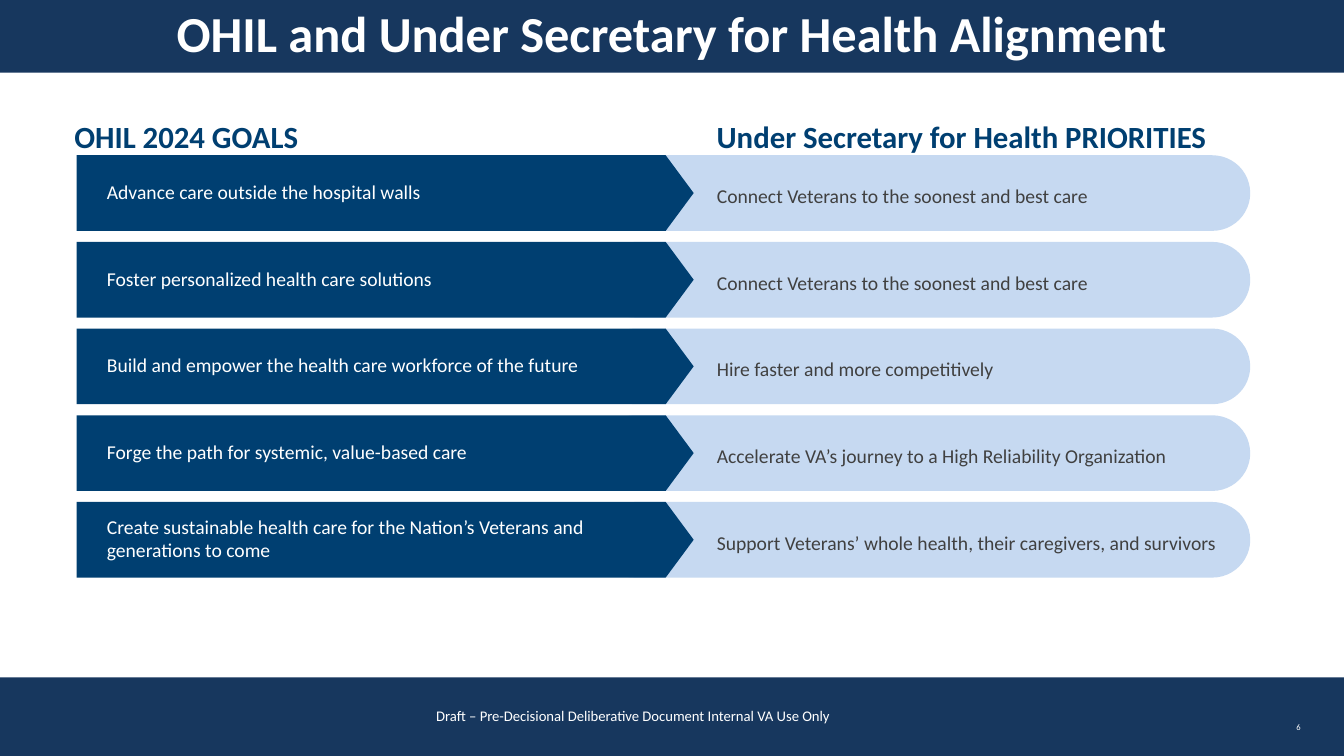
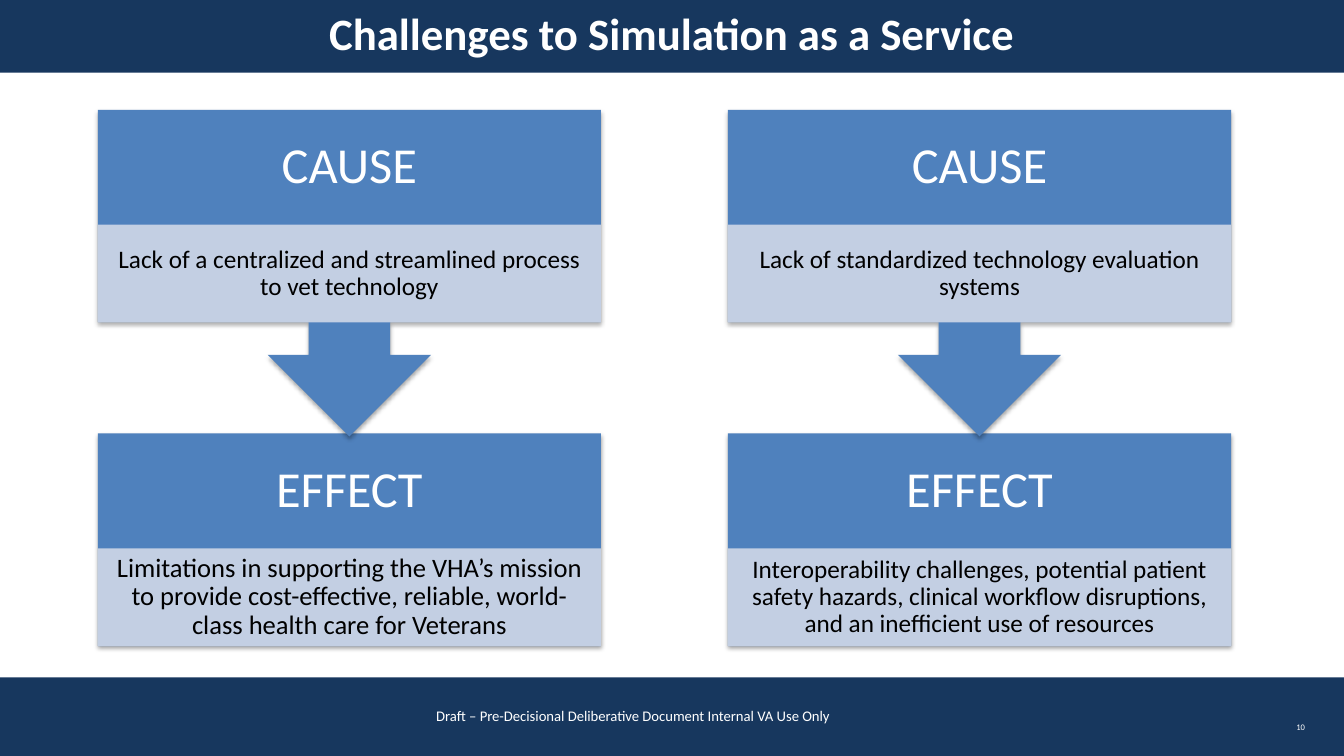
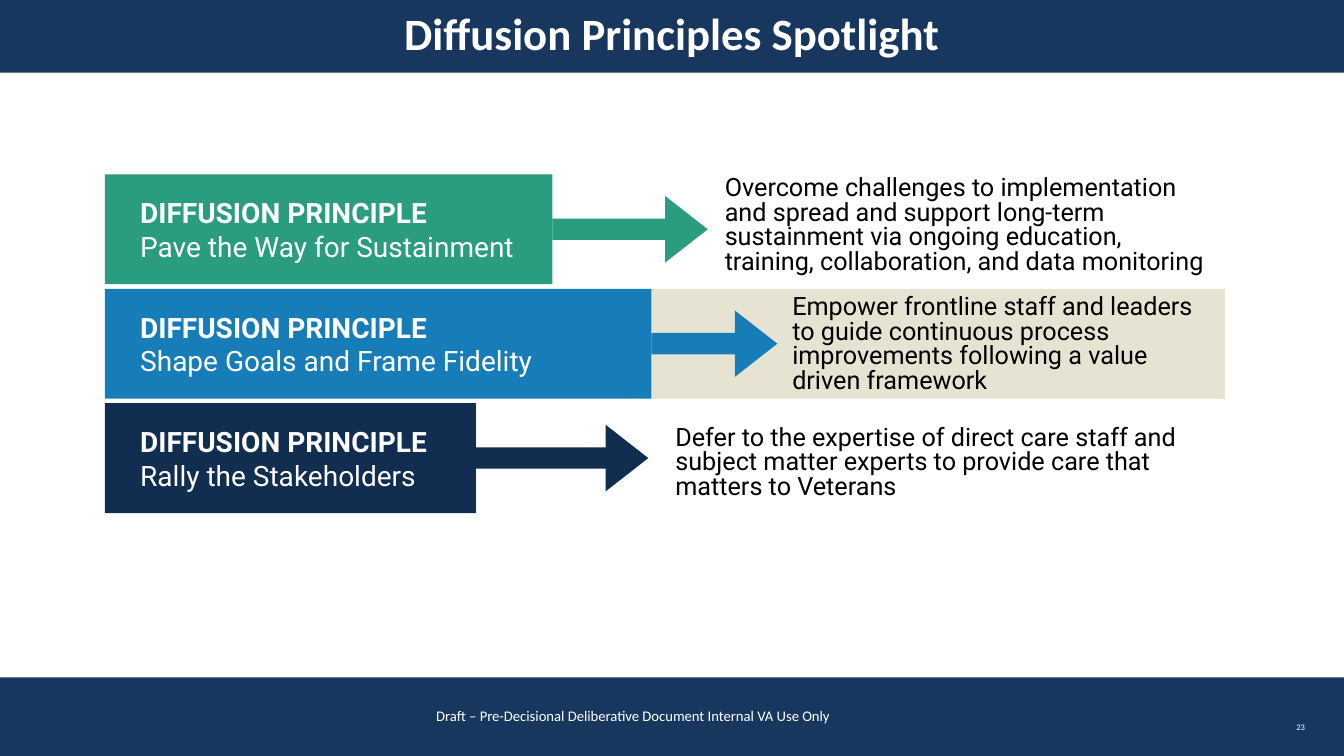
import pptx
import pptx.dml.color
import pptx.enum.shapes
import pptx.enum.text
import pptx.oxml
import pptx.oxml.ns
import pptx.util

Inches, Pt = pptx.util.Inches, pptx.util.Pt
SHAPE = pptx.enum.shapes.MSO_SHAPE
ALIGN = pptx.enum.text.PP_ALIGN
ANCHOR = pptx.enum.text.MSO_ANCHOR

WIDTH, HEIGHT = 13.33, 7.5
BAND, NAVY, PALE_BLUE = "17375E", "003F71", "C6D9F1"
BLUE, PALE_GREY_BLUE, BEIGE = "4F81BD", "D0D8E8", "E6E3D2"
WHITE, BLACK, DARK_GREY = "FFFFFF", "000000", "404040"
TITLE_BAND = (0, -0.08, WIDTH, 0.8)
FOOTER_BAND = (0, 6.72, WIDTH, 0.8)
FOOTER = "Draft – Pre-Decisional Deliberative Document Internal VA Use Only"

# Title, title size, slide number
ALIGNMENT = ("OHIL and Under Secretary for Health Alignment", 36, "6")
CHALLENGES = ("Challenges to Simulation as a Service", 32, "10")
PRINCIPLES = ("Diffusion Principles Spotlight", 32, "23")

COLUMN_HEADS = [
    ("OHIL 2024 GOALS", 0.64, 2.45),
    ("Under Secretary for Health PRIORITIES", 7.01, 5.12),
]
GOALS_AND_PRIORITIES = [
    ("Advance care outside the hospital walls",
     "Connect Veterans to the soonest and best care"),
    ("Foster personalized health care solutions",
     "Connect Veterans to the soonest and best care"),
    ("Build and empower the health care workforce of the future",
     "Hire faster and more competitively"),
    ("Forge the path for systemic, value-based care",
     "Accelerate VA’s journey to a High Reliability Organization"),
    ("Create sustainable health care for the Nation’s Veterans and\ngenerations to come",
     "Support Veterans’ whole health, their caregivers, and survivors"),
]

# Cause, effect, size of the effect text
CAUSES_AND_EFFECTS = [
    ("Lack of a centralized and streamlined process to vet technology",
     "Limitations in supporting the VHA’s mission to provide cost-effective, "
     "reliable, world-class health care for Veterans", 19),
    ("Lack of standardized technology evaluation systems",
     "Interoperability challenges, potential patient safety hazards, clinical "
     "workflow disruptions, and an inefficient use of resources", 18),
]

# Principle, colour, label width, arrow length, description, description place
DIFFUSION_PRINCIPLES = [
    ("Pave the Way for Sustainment", "2A9C80", 4.44, 1.54,
     "Overcome challenges to implementation and spread and support long-term "
     "sustainment via ongoing education, training, collaboration, and data monitoring",
     (7.09, 1.69, 5.06, 1.11)),
    ("Shape Goals and Frame Fidelity", "167DB9", 5.42, 1.25,
     "Empower frontline staff and leaders to guide continuous process "
     "improvements following a value driven framework",
     (7.76, 2.87, 4.4, 1.11)),
    ("Rally the Stakeholders", "112D50", 3.68, 1.71,
     "Defer to the expertise of direct care staff and subject matter experts "
     "to provide care that matters to Veterans",
     (6.6, 4.17, 5.69, 0.86)),
]
HIGHLIGHTED = 1


def rgb(value):
    return pptx.dml.color.RGBColor.from_string(value)


def write(shape, text, size, color, font="Calibri", bold=False, align=ALIGN.LEFT,
          anchor=ANCHOR.MIDDLE, margins=None, spacing=None, wrap=True):
    frame = shape.text_frame
    frame.text = text
    frame.word_wrap = wrap
    frame.vertical_anchor = anchor
    if margins:
        (frame.margin_left, frame.margin_top,
         frame.margin_right, frame.margin_bottom) = map(Inches, margins)
    for paragraph in frame.paragraphs:
        paragraph.alignment = align
        if spacing:
            paragraph.line_spacing = spacing
        for run in paragraph.runs:
            run.font.name, run.font.size, run.font.bold = font, Pt(size), bold
            run.font.color.rgb = rgb(color)


def add_text(slide, place, text, size, color, **style):
    box = slide.shapes.add_textbox(*map(Inches, place))
    write(box, text, size, color, **style)
    return box


def add_block(slide, kind, place, color, adjustments=()):
    block = slide.shapes.add_shape(kind, *map(Inches, place))
    block.shadow.inherit = False
    block.fill.solid()
    block.fill.fore_color.rgb = rgb(color)
    block.line.fill.background()
    for index, value in enumerate(adjustments):
        block.adjustments[index] = value
    return block


def drop_shadow(shape):
    effects = shape.element.spPr.find(pptx.oxml.ns.qn("a:effectLst"))
    effects.append(pptx.oxml.parse_xml(
        f'<a:outerShdw {pptx.oxml.ns.nsdecls("a")} blurRad="{Pt(3.1)}" dist="{Pt(1.8)}" '
        'dir="5400000" rotWithShape="0"><a:srgbClr val="000000">'
        '<a:alpha val="35000"/></a:srgbClr></a:outerShdw>'))


def make_translucent(shape, percent):
    color = shape.element.spPr.find(".//" + pptx.oxml.ns.qn("a:srgbClr"))
    color.append(pptx.oxml.parse_xml(
        f'<a:alpha {pptx.oxml.ns.nsdecls("a")} val="{percent * 1000}"/>'))


def prepare_layout(layout, slide):
    """Keep the layout's title only, and move bands and footer from slide to layout."""
    for placeholder in list(layout.placeholders):
        if placeholder.placeholder_format.idx:
            placeholder.element.getparent().remove(placeholder.element)
        else:
            (placeholder.left, placeholder.top,
             placeholder.width, placeholder.height) = map(Inches, TITLE_BAND)
    shared = [add_block(slide, SHAPE.RECTANGLE, place, BAND)
              for place in (FOOTER_BAND, TITLE_BAND)]
    shared.append(add_text(slide, (3.45, 6.96, 5.66, 0.28), FOOTER, 10.5, WHITE,
                           align=ALIGN.CENTER, anchor=ANCHOR.TOP))
    for part in shared:
        layout.element.cSld.spTree.append(part.element)


def fill_frame(slide, title, size, number):
    write(slide.shapes.title, title, size, WHITE, bold=True, align=ALIGN.CENTER)
    add_text(slide, (12.76, 7.11, 0.56, 0.4), number, 6.1, WHITE, anchor=ANCHOR.TOP)


def build_alignment(slide):
    top, pitch, height = 1.54, 0.86, 0.75
    for head, left, width in COLUMN_HEADS:
        add_text(slide, (left, 1.12, width, 0.47), head, 22, NAVY,
                 bold=True, anchor=ANCHOR.TOP, wrap=False)
    for row, (goal, priority) in enumerate(GOALS_AND_PRIORITIES):
        y = top + row * pitch
        pill = add_block(slide, SHAPE.ROUNDED_RECTANGLE, (5.92, y, 6.48, height),
                         PALE_BLUE, [0.5])
        write(pill, priority, 14, DARK_GREY, margins=(1.08, 0.05, 0, 0))
        arrow = add_block(slide, SHAPE.PENTAGON, (0.76, y, 6.12, height), NAVY, [0.37])
        write(arrow, goal, 14, WHITE, margins=(0.3, 0, 0, 0.03))


def build_challenges(slide):
    width, head_height, detail_height = 4.99, 1.14, 0.97
    for column, (cause, effect, effect_size) in enumerate(CAUSES_AND_EFFECTS):
        left = 0.97 + column * 6.25
        for head, detail, size, kind, top, height in (
                ("EFFECT", effect, effect_size, SHAPE.RECTANGLE, 4.3, 2.11),
                ("CAUSE", cause, 18, SHAPE.DOWN_ARROW_CALLOUT, 1.09, 3.24)):
            panel = add_block(slide, kind, (left, top, width, height), BLUE)
            drop_shadow(panel)
            write(panel, head, 36, WHITE, align=ALIGN.CENTER, spacing=0.9,
                  margins=(0.28, 0, 0.28, detail_height))
            strip = add_block(slide, SHAPE.RECTANGLE,
                              (left, top + head_height, width, detail_height),
                              PALE_GREY_BLUE)
            make_translucent(strip, 90)
            write(strip, detail, size, BLACK, align=ALIGN.CENTER, spacing=0.9,
                  margins=(0.14, 0.03, 0.14, 0.03))


def build_principles(slide):
    left, right, top, pitch, height = 1.04, 12.15, 1.73, 1.135, 1.09
    arrow_height = 0.66
    for row, (principle, color, width, arrow_length, description, place) in enumerate(
            DIFFUSION_PRINCIPLES):
        y = top + row * pitch
        edge = left + width
        if row == HIGHLIGHTED:
            add_block(slide, SHAPE.RECTANGLE, (edge, y, right - edge, height), BEIGE)
        add_block(slide, SHAPE.RIGHT_ARROW,
                  (edge, y + (height - arrow_height) / 2, arrow_length, arrow_height),
                  color, [0.32, 0.64])
        label = add_block(slide, SHAPE.RECTANGLE, (left, y, width, height), color)
        write(label, f"DIFFUSION PRINCIPLE\n{principle}", 20, WHITE, font="Roboto",
              margins=(0.35, 0, 0, 0))
        label.text_frame.paragraphs[0].runs[0].font.bold = True
        add_text(slide, place, description, 18, BLACK, font="Roboto", spacing=Pt(17.5))


def main():
    deck = pptx.Presentation()
    deck.slide_width, deck.slide_height = Inches(WIDTH), Inches(HEIGHT)
    layout = deck.slide_layouts.get_by_name("Title Only")
    pages = [(ALIGNMENT, build_alignment), (CHALLENGES, build_challenges),
             (PRINCIPLES, build_principles)]
    slides = [deck.slides.add_slide(layout) for _ in pages]
    prepare_layout(layout, slides[0])
    for slide, (heading, build) in zip(slides, pages):
        fill_frame(slide, *heading)
        build(slide)
    deck.save("out.pptx")


if __name__ == "__main__":
    main()
